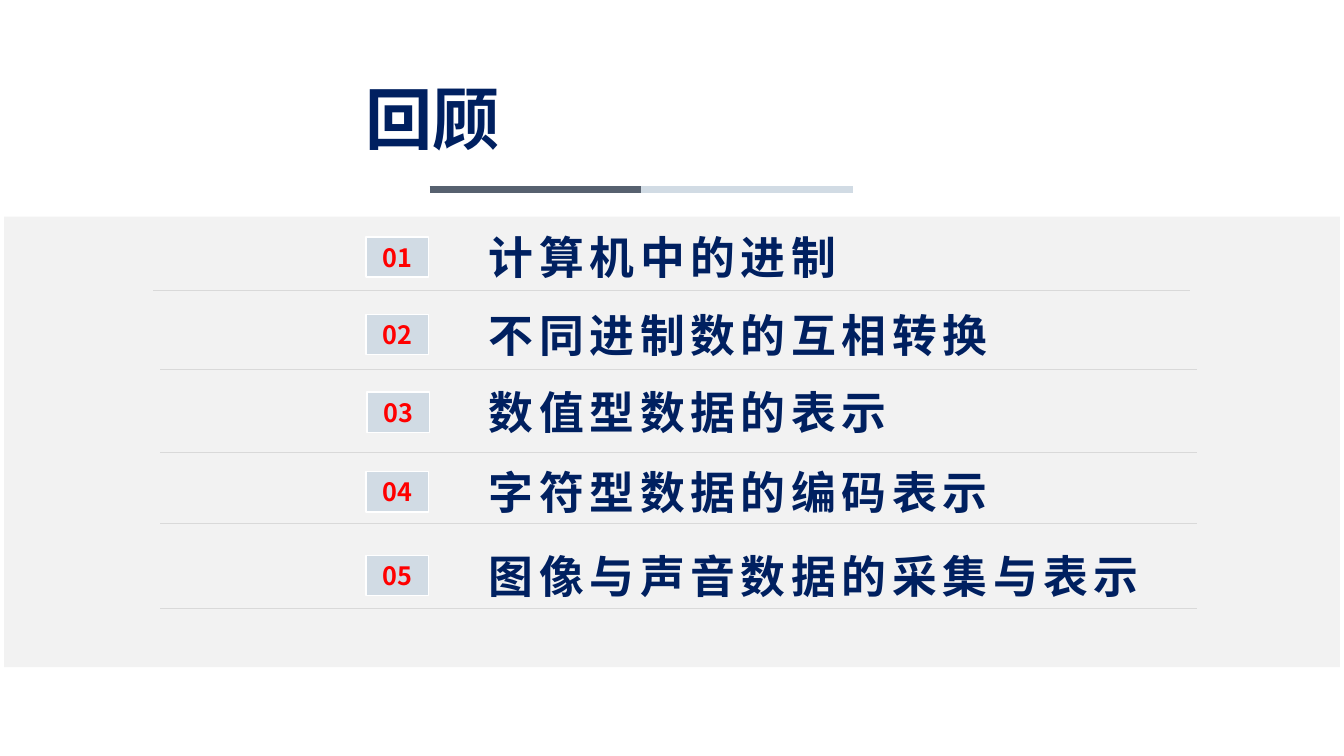
"""Build the review slide: a title above five numbered topics on a grey band."""
import pptx
import pptx.util
import pptx.dml.color
import pptx.enum.shapes
import pptx.enum.text
import pptx.oxml.ns
from lxml import etree

RGB = pptx.dml.color.RGBColor
Inches = pptx.util.Inches
Pt = pptx.util.Pt
MIDDLE = pptx.enum.text.MSO_ANCHOR.MIDDLE
TOP = pptx.enum.text.MSO_ANCHOR.TOP
LEFT = pptx.enum.text.PP_ALIGN.LEFT
CENTER = pptx.enum.text.PP_ALIGN.CENTER
RECT = pptx.enum.shapes.MSO_SHAPE.RECTANGLE
STRAIGHT = pptx.enum.shapes.MSO_CONNECTOR.STRAIGHT

NAVY = RGB(0x00, 0x20, 0x60)
RED = RGB(0xFF, 0x00, 0x00)
WHITE = RGB(0xFF, 0xFF, 0xFF)
SLATE = RGB(0x57, 0x61, 0x6F)
PALE_BLUE = RGB(0xD1, 0xDB, 0xE4)
BAND_GREY = RGB(0xF2, 0xF2, 0xF2)
RULE_GREY = RGB(0xD9, 0xD9, 0xD9)
FONT = "Noto Sans CJK SC"

prs = pptx.Presentation()
prs.slide_width, prs.slide_height = Inches(13.33), Inches(7.5)
s = prs.slides.add_slide(prs.slide_layouts[6])


def add_line(x1, x2, y, color, width):
    sp = s.shapes.add_connector(STRAIGHT, Inches(x1), Inches(y), Inches(x2), Inches(y))
    sp.line.color.rgb = color
    sp.line.width = Pt(width)
    etree.SubElement(sp._element.spPr, pptx.oxml.ns.qn("a:effectLst"))


def write(sp, text, size, color, spacing, anchor, align):
    tf = sp.text_frame
    tf.word_wrap = True
    tf.vertical_anchor = anchor
    p = tf.paragraphs[0]
    p.alignment = align
    r = p.add_run()
    r.text = text
    for name, value in {"size": Pt(size), "bold": True, "name": FONT}.items():
        setattr(r.font, name, value)
    r.font.color.rgb = color
    rPr = r.font._element
    rPr.set("spc", str(spacing))
    etree.SubElement(rPr, pptx.oxml.ns.qn("a:ea"), typeface=FONT)
    return tf


sp = s.shapes.add_textbox(Inches(3.63), Inches(0.85), Inches(3.31), Inches(0.74))
tf = write(sp, "回顾", 48, NAVY, -10, MIDDLE, LEFT)
for side in ("left", "top", "right", "bottom"):
    setattr(tf, f"margin_{side}", 0)
tf.paragraphs[0].line_spacing = 0.9

for i, color in enumerate((SLATE, PALE_BLUE)):
    add_line(4.26 + 2.1 * i, 6.36 + 2.1 * i, 1.88, color, 4.5)

sp = s.shapes.add_shape(RECT, Inches(0.04), Inches(2.15), Inches(13.25), Inches(4.47))
sp.shadow.inherit = False
sp.fill.solid()
sp.fill.fore_color.rgb = BAND_GREY
sp.line.fill.background()

topics = [
    ("计算机中的进制", 2.35, 3.63, 1.52, 2.88),
    ("不同进制数的互相转换", 3.12, 3.63, 1.59, 3.66),
    ("数值型数据的表示", 3.89, 3.64, 1.59, 4.49),
    ("字符型数据的编码表示", 4.68, 3.63, 1.59, 5.19),
    ("图像与声音数据的采集与表示", 5.51, 3.63, 1.59, 6.03),
]
for number, (topic, top, badge_left, rule_left, rule_y) in enumerate(topics, 1):
    add_line(rule_left, rule_left + 10.28, rule_y, RULE_GREY, 0.25)

    sp = s.shapes.add_shape(RECT, Inches(badge_left), Inches(top), Inches(0.62), Inches(0.4))
    sp.shadow.inherit = False
    sp.fill.solid()
    sp.fill.fore_color.rgb = PALE_BLUE
    sp.line.color.rgb = WHITE
    sp.line.width = Pt(1)
    write(sp, f"{number:02d}", 18, RED, 0, MIDDLE, CENTER)

    sp = s.shapes.add_textbox(Inches(4.75), Inches(top - 0.12), Inches(7.01), Inches(0.64))
    write(sp, topic, 32, NAVY, 400, TOP, LEFT)

prs.save("out.pptx")
